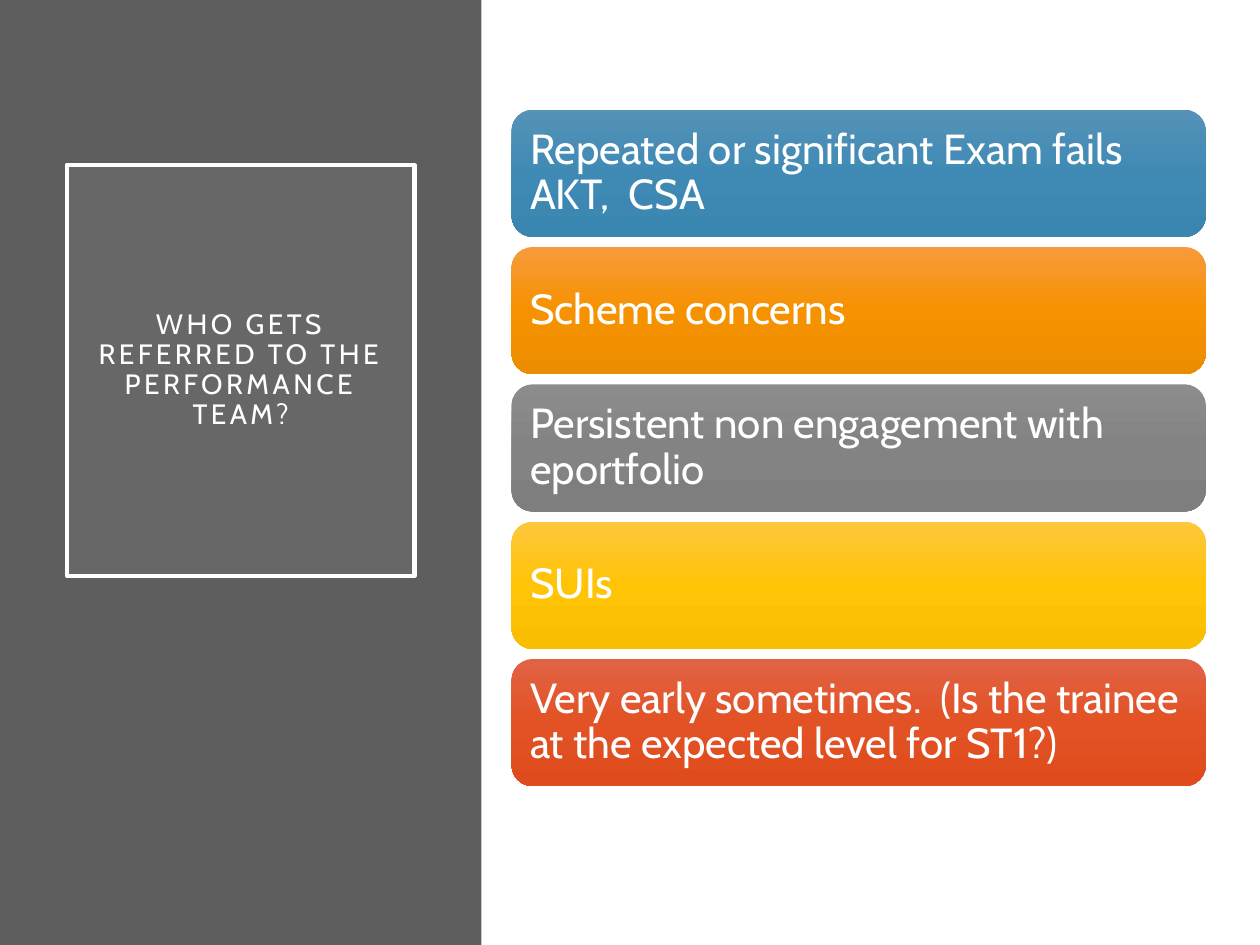
"""Build a slide listing the reasons for referral to the performance team."""
from copy import deepcopy

from lxml import etree
from pptx import Presentation
from pptx.dml.color import RGBColor
from pptx.enum.shapes import MSO_SHAPE
from pptx.enum.text import MSO_ANCHOR, MSO_AUTO_SIZE, PP_ALIGN
from pptx.oxml.ns import qn
from pptx.util import Inches, Pt

RECTANGLE = MSO_SHAPE.RECTANGLE
ROUNDED_RECTANGLE = MSO_SHAPE.ROUNDED_RECTANGLE
MIDDLE = MSO_ANCHOR.MIDDLE
NO_AUTOFIT = MSO_AUTO_SIZE.NONE
LEFT = PP_ALIGN.LEFT
CENTER = PP_ALIGN.CENTER
TITLE_ONLY = 5

COLORS = {"panel": "5E5E5E", "title_fill": "9E9E9E", "white": "FFFFFF"}
GRADIENTS = {
    "blue": ("5592B7", "3F8AB5", "3986B1"),
    "orange": ("F79A3D", "F69200", "EC8C00"),
    "gray": ("8C8C8C", "838383", "7E7E7E"),
    "yellow": ("FEC73E", "FFC405", "F9BE00"),
    "red": ("E16346", "E25224", "DF4B1D"),
}
REASONS = [
    ("Repeated or significant Exam fails AKT,  CSA", "blue"),
    ("Scheme concerns", "orange"),
    ("Persistent non engagement with eportfolio", "gray"),
    ("SUIs", "yellow"),
    ("Very early sometimes.  (Is the trainee at the expected level for ST1?)", "red"),
]
CARD_LEFT, CARD_TOP, CARD_WIDTH, CARD_HEIGHT = 4.06, 0.87, 5.51, 1.01
CARD_PITCH = 1.09


class SlideBuilder:
    """Hold the text style and the current slide."""

    font_name = "Cabin"

    def __init__(self, presentation):
        self.slide = presentation.slides.add_slide(presentation.slide_layouts[TITLE_ONLY])

    def color(self, name):
        return RGBColor.from_string(COLORS[name])

    def text(self, shape, text, size, alignment, inset):
        frame = shape.text_frame
        frame.text = text
        paragraph = frame.paragraphs[0]
        margins = {f"margin_{side}": Inches(inset) for side in ("left", "top", "right", "bottom")}
        formats = [
            (frame, {"word_wrap": True, "auto_size": NO_AUTOFIT, "vertical_anchor": MIDDLE, **margins}),
            (paragraph, {"alignment": alignment, "line_spacing": 0.9}),
            (paragraph.runs[0].font, {"name": self.font_name, "size": Pt(size)}),
        ]
        for target, values in formats:
            for attribute, value in values.items():
                setattr(target, attribute, value)
        run = paragraph.runs[0]
        run.font.color.rgb = self.color("white")
        return run

    def shape(self, kind, left, top, width, height):
        shape = self.slide.shapes.add_shape(
            kind, Inches(left), Inches(top), Inches(width), Inches(height))
        shape.shadow.inherit = False
        shape.line.fill.background()
        return shape

    def panel(self, left, top, width, height):
        panel = self.shape(RECTANGLE, left, top, width, height)
        panel.fill.solid()
        panel.fill.fore_color.rgb = self.color("panel")
        self.slide.shapes.title._element.addprevious(panel._element)

    def title(self, text, left, top, width, height):
        title = self.slide.shapes.title
        position = {"left": left, "top": top, "width": width, "height": height}
        for attribute, value in position.items():
            setattr(title, attribute, Inches(value))
        title.fill.solid()
        title.fill.fore_color.rgb = self.color("title_fill")
        fill_color = title._element.spPr.find(qn("a:solidFill"))[0]
        etree.SubElement(fill_color, qn("a:alpha"), val="15000")
        title.line.color.rgb = self.color("white")
        title.line.width = Pt(2.5)
        run = self.text(title, text, 16, CENTER, 0.2)
        run.font._element.set("spc", "200")

    def card(self, text, gradient, left, top, width, height):
        card = self.shape(ROUNDED_RECTANGLE, left, top, width, height)
        card.fill.gradient()
        card.fill.gradient_angle = 270
        stop_list = card._element.spPr.find(qn("a:gradFill")).find(qn("a:gsLst"))
        stop_list.append(deepcopy(stop_list[0]))
        for index, (stop, color) in enumerate(zip(card.fill.gradient_stops, GRADIENTS[gradient])):
            stop.position = index / 2
            stop.color.rgb = RGBColor.from_string(color)
        self.text(card, text, 24, LEFT, 0.1)


def main():
    presentation = Presentation()
    presentation.slide_width = Inches(10)
    presentation.slide_height = Inches(7.5)
    builder = SlideBuilder(presentation)
    builder.panel(0, 0, 3.82, 7.5)
    builder.title("WHO GETS REFERRED TO THE PERFORMANCE TEAM?", 0.53, 1.31, 2.76, 3.26)
    for index, (reason, gradient) in enumerate(REASONS):
        top = CARD_TOP + index * CARD_PITCH
        builder.card(reason, gradient, CARD_LEFT, top, CARD_WIDTH, CARD_HEIGHT)
    presentation.save("out.pptx")


if __name__ == "__main__":
    main()
